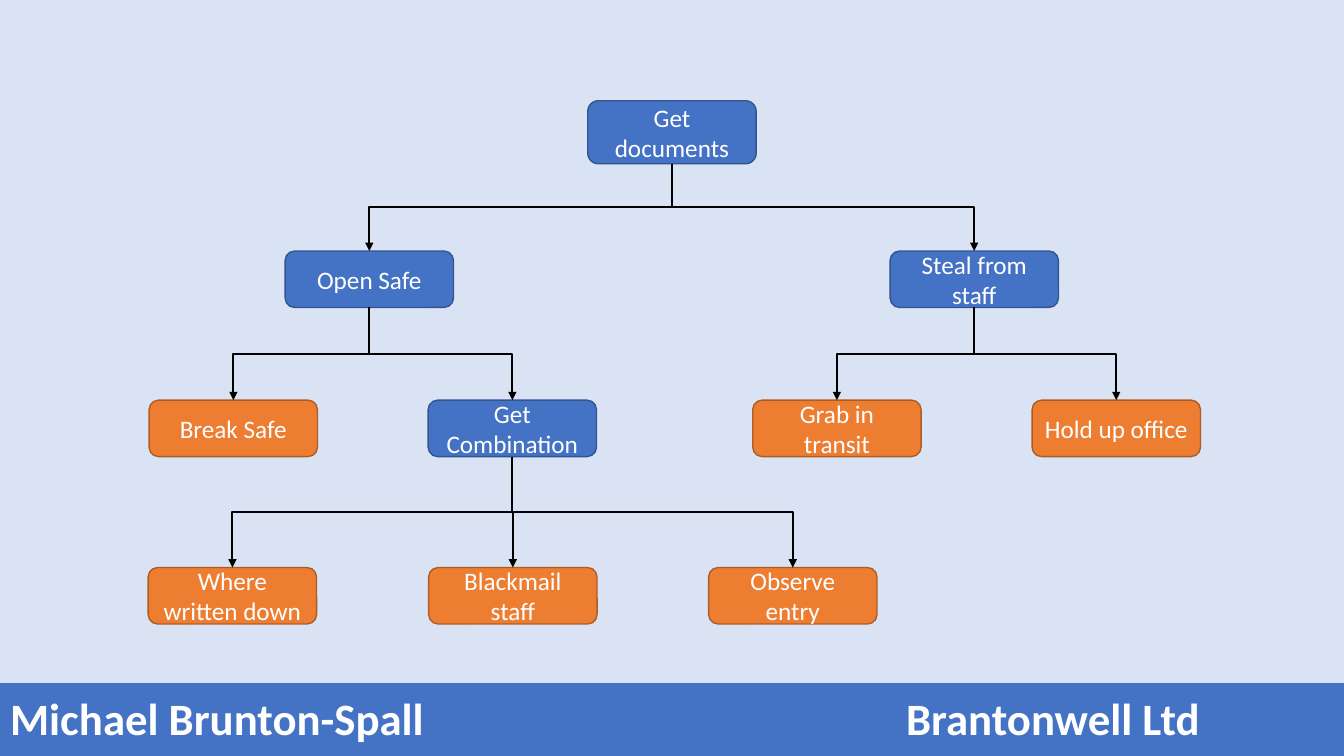
from lxml.etree import SubElement
from pptx import Presentation
from pptx.dml.color import RGBColor
from pptx.enum.shapes import MSO_CONNECTOR as LINK, MSO_SHAPE as SHAPE
from pptx.enum.text import MSO_ANCHOR as ANCHOR, PP_ALIGN as ALIGN
from pptx.oxml.ns import qn
from pptx.util import Inches, Pt

SLIDE_W, SLIDE_H = Inches(13.333), Inches(7.5)
PALE_BLUE = RGBColor(0xDA, 0xE3, 0xF3)
BLUE = RGBColor(0x44, 0x72, 0xC4)
DARK_BLUE = RGBColor(0x32, 0x54, 0x91)
ORANGE = RGBColor(0xED, 0x7D, 0x31)
DARK_ORANGE = RGBColor(0xAF, 0x5C, 0x24)
WHITE = RGBColor(0xFF, 0xFF, 0xFF)
BLACK = RGBColor(0x00, 0x00, 0x00)

GOAL, ATTACK = (BLUE, DARK_BLUE), (ORANGE, DARK_ORANGE)
STEP_FONT = {"name": "Calibri", "size": Pt(18), "bold": False}
FOOTER_FONT = {"name": "Calibri", "size": Pt(32), "bold": True}
FOOTER = ("Michael Brunton-Spall", "", "Brantonwell Ltd")

STEP_WIDTH = 12.53
ROOT_HEIGHT, STEP_HEIGHT = 8.33, 7.47
LEVEL_TOPS = (13.33, 33.2, 52.93, 75.07)

# text, centre in percent of the slide's width, kind, children
TREE = ("Get documents", 50, GOAL, (
    ("Open Safe", 27.48, GOAL, (
        ("Break Safe", 17.36, ATTACK, ()),
        ("Get Combination", 38.12, GOAL, (
            ("Where written down", 17.29, ATTACK, ()),
            ("Blackmail staff", 38.16, ATTACK, ()),
            ("Observe entry", 58.99, ATTACK, ()))))),
    ("Steal from staff", 72.49, GOAL, (
        ("Grab in transit", 62.27, ATTACK, ()),
        ("Hold up office", 83.06, ATTACK, ())))))


def across(percent):
    return round(SLIDE_W * percent / 100)


def down(percent):
    return round(SLIDE_H * percent / 100)


def write(frame, text, style):
    run = frame.paragraphs[0].add_run()
    run.text = text
    run.font.color.rgb = WHITE
    for name, value in style.items():
        setattr(run.font, name, value)


def add_footer(slide):
    band = slide.shapes.add_table(
        1, len(FOOTER), 0, down(90.4), SLIDE_W, down(9.87)).table
    band.first_row = band.horz_banding = False
    for cell, text in zip(band.rows[0].cells, FOOTER):
        cell.vertical_anchor = ANCHOR.MIDDLE
        properties = cell._tc.get_or_add_tcPr()
        for side in ("a:lnL", "a:lnR", "a:lnT", "a:lnB"):
            SubElement(SubElement(properties, qn(side)), qn("a:noFill"))
        cell.fill.solid()
        cell.fill.fore_color.rgb = BLUE
        if text:
            write(cell.text_frame, text, FOOTER_FONT)


def add_step(slide, text, centre, kind, level):
    step = slide.shapes.add_shape(
        SHAPE.ROUNDED_RECTANGLE,
        across(centre - STEP_WIDTH / 2), down(LEVEL_TOPS[level]),
        across(STEP_WIDTH), down(STEP_HEIGHT if level else ROOT_HEIGHT))
    fill, outline = kind
    step.shadow.inherit = False
    step.fill.solid()
    step.fill.fore_color.rgb = fill
    step.line.color.rgb = outline
    step.line.width = Pt(1)
    frame = step.text_frame
    frame.word_wrap = True
    frame.vertical_anchor = ANCHOR.MIDDLE
    frame.paragraphs[0].alignment = ALIGN.CENTER
    write(frame, text, STEP_FONT)
    return step


def add_branch(slide, parent, child):
    start_x, end_x = (step.left + step.width // 2 for step in (parent, child))
    start_y, end_y = parent.top + parent.height, child.top
    drop, reach = end_y - start_y, abs(end_x - start_x)
    branch = slide.shapes.add_connector(
        LINK.ELBOW, start_x, start_y, end_x, end_y)
    branch.begin_connect(parent, 2)
    branch.end_connect(child, 0)

    turned = {"left": (start_x + end_x - drop) // 2,
              "top": (start_y + end_y - reach) // 2,
              "width": drop, "height": reach}
    for name, value in turned.items():
        setattr(branch, name, value)
    rightward = end_x > start_x
    properties = branch._element.spPr
    frame = properties.find(qn("a:xfrm"))
    frame.set("rot", str((270 if rightward else 90) * 60000))
    frame.set("flipH", "1" if rightward else "0")

    branch.line.color.rgb = BLACK
    branch.line.width = Pt(1.5)
    SubElement(properties.find(qn("a:ln")), qn("a:tailEnd"), type="triangle")
    SubElement(properties, qn("a:effectLst"))


def add_tree(slide, node, level=0):
    text, centre, kind, children = node
    step = add_step(slide, text, centre, kind, level)
    for child in children:
        add_branch(slide, step, add_tree(slide, child, level + 1))
    return step


def main():
    deck = Presentation()
    deck.slide_width, deck.slide_height = SLIDE_W, SLIDE_H
    slide = deck.slides.add_slide(deck.slide_layouts[6])
    slide.background.fill.solid()
    slide.background.fill.fore_color.rgb = PALE_BLUE
    add_footer(slide)
    add_tree(slide, TREE)
    deck.save("out.pptx")


if __name__ == "__main__":
    main()
